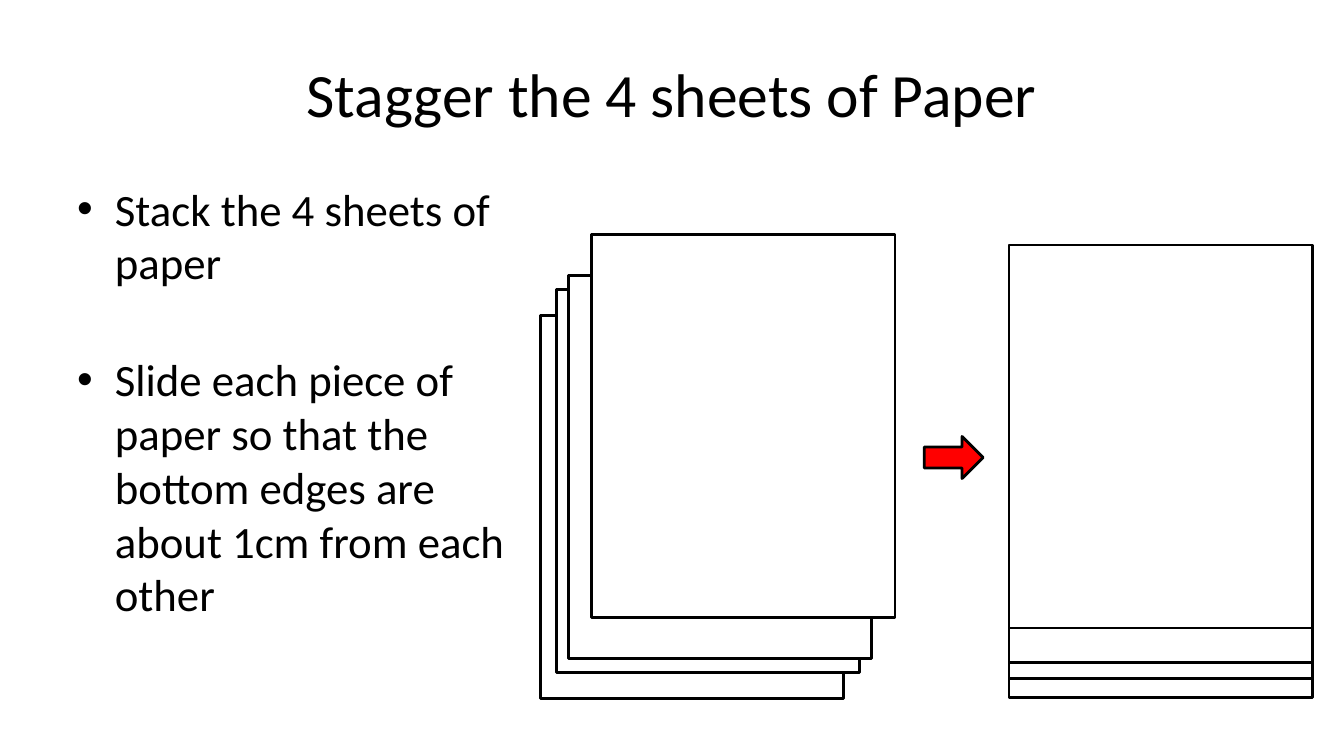
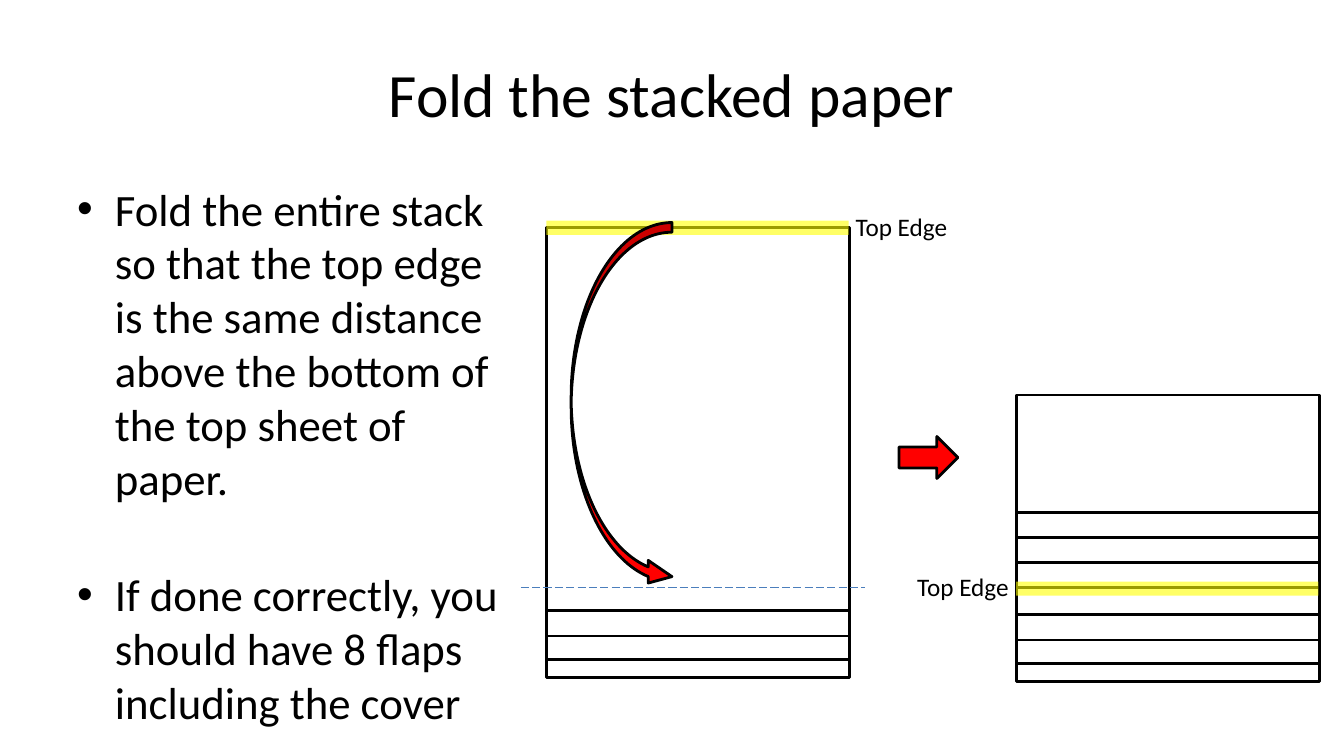
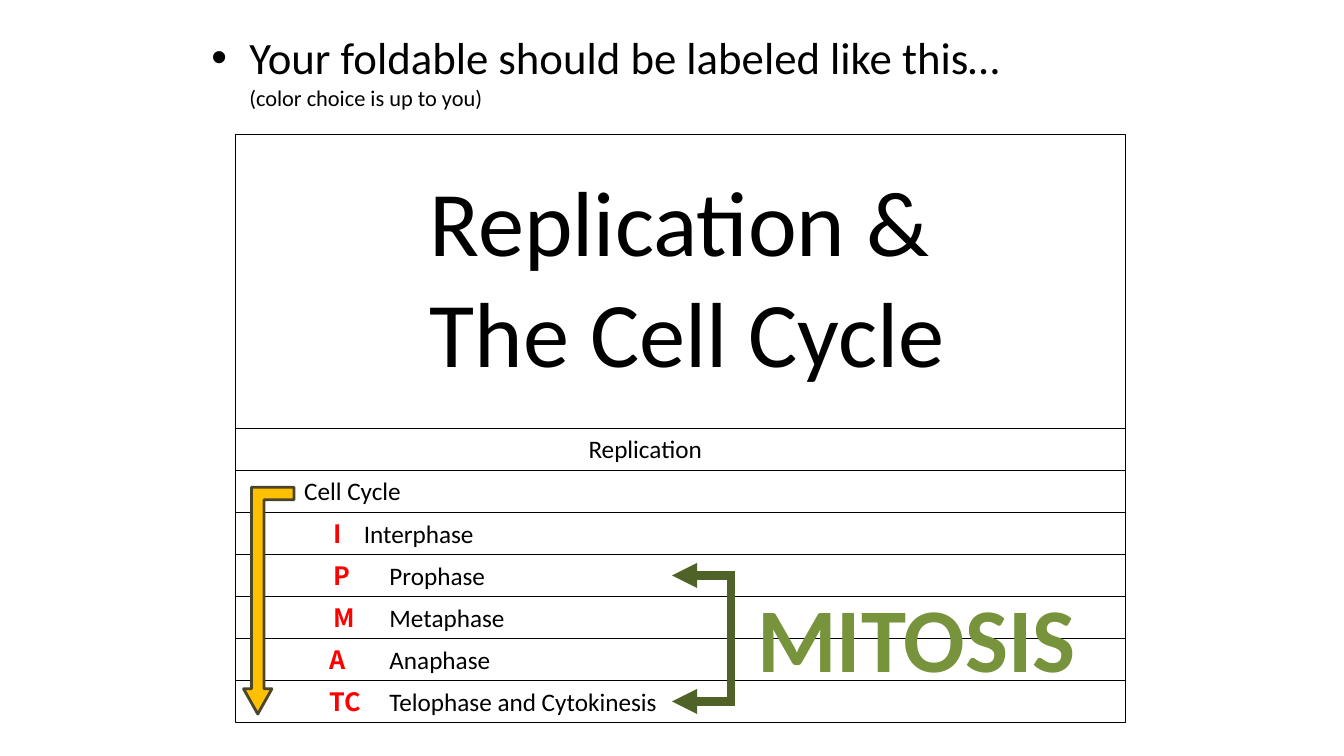
"""Build three slides on making and labelling a layered paper foldable."""
from dataclasses import dataclass

from lxml import etree
from pptx import Presentation
from pptx.dml.color import RGBColor
from pptx.enum.dml import MSO_LINE
from pptx.enum.shapes import MSO_CONNECTOR, MSO_SHAPE
from pptx.enum.text import MSO_ANCHOR, PP_ALIGN
from pptx.oxml.ns import qn
from pptx.util import Pt

RULE = MSO_CONNECTOR.STRAIGHT
SHEET = MSO_SHAPE.RECTANGLE
RIGHT_ARROW = MSO_SHAPE.RIGHT_ARROW
CURVED_ARROW = MSO_SHAPE.CURVED_RIGHT_ARROW
BENT_ARROW = MSO_SHAPE.BENT_UP_ARROW
LONG_DASH = MSO_LINE.LONG_DASH
LEFT, CENTER = PP_ALIGN.LEFT, PP_ALIGN.CENTER
TOP, MIDDLE = MSO_ANCHOR.TOP, MSO_ANCHOR.MIDDLE


@dataclass(frozen=True)
class Theme:
    font: str = "Calibri"
    letter_font: str = "Noto Sans CJK KR"
    black: str = "000000"
    white: str = "FFFFFF"
    red: str = "FF0000"
    yellow: str = "FFFF00"
    fold_blue: str = "4B7EBC"
    gold: str = "FFC000"
    brown: str = "4A452A"
    dark_green: str = "4F6228"
    green: str = "77933C"
    title: float = 44
    body: float = 32
    label: float = 18
    note: float = 16
    cover: float = 66
    mitosis: float = 65
    outline: float = 2
    inset: float = 7.2
    hang: float = 27


THEME = Theme()


def add_text(slide, paragraphs, left, top, width, height, size=THEME.label, font=THEME.font,
             color=THEME.black, bold=False, align=LEFT, anchor=TOP, bullet=False,
             hang=0, gap=0, first_gap=0, tab=None):
    """Add a text box; a paragraph is a string or a list of (text, format) runs."""
    frame = slide.shapes.add_textbox(Pt(left), Pt(top), Pt(width), Pt(height)).text_frame
    frame.word_wrap = True
    frame.vertical_anchor = anchor
    for index, content in enumerate(paragraphs):
        paragraph = frame.add_paragraph() if index else frame.paragraphs[0]
        paragraph.alignment = align
        paragraph.space_before = Pt(gap if index else first_gap)
        props = paragraph._p.get_or_add_pPr()
        if hang:
            props.set("marL", str(Pt(hang)))
        if bullet is True or bullet == index + 1:
            props.set("indent", str(-Pt(hang)))
            etree.SubElement(props, qn("a:buFont"), typeface="Arial")
            etree.SubElement(props, qn("a:buChar"), char="•")
        if tab:
            stops = etree.SubElement(props, qn("a:tabLst"))
            etree.SubElement(stops, qn("a:tab"), pos=str(Pt(tab)), algn="l")
        runs = [(content, {})] if isinstance(content, str) else content
        for words, changes in runs:
            run = paragraph.add_run()
            run.text = words
            run.font.name = changes.get("font", font)
            run.font.size = Pt(changes.get("size", size))
            run.font.bold = changes.get("bold", bold)
            run.font.color.rgb = RGBColor.from_string(changes.get("color", color))


def draw(slide, kind, left, top, width, height, fill=THEME.white, ink=THEME.black,
         weight=THEME.outline, adjust=(), turn=0, dash=None, opacity=None, tip=False):
    """Draw a preset shape, or a straight rule running by width and height."""
    if kind is RULE:
        item = slide.shapes.add_connector(
            kind, Pt(left), Pt(top), Pt(left + width), Pt(top + height))
    else:
        item = slide.shapes.add_shape(kind, Pt(left), Pt(top), Pt(width), Pt(height))
        item.shadow.inherit = False
        item.fill.solid()
        item.fill.fore_color.rgb = RGBColor.from_string(fill)
        item.rotation = turn
        for index, value in enumerate(adjust):
            item.adjustments[index] = value
    item.line.color.rgb = RGBColor.from_string(ink)
    item.line.width = Pt(weight)
    if dash:
        item.line.dash_style = dash
    stroke = item.line._get_or_add_ln()
    if opacity:
        ink_node = stroke.find(".//" + qn("a:srgbClr"))
        etree.SubElement(ink_node, qn("a:alpha"), val=str(opacity * 1000))
    if tip:
        etree.SubElement(stroke, qn("a:tailEnd"), type="triangle")
    if kind is RULE:
        etree.SubElement(item._element.spPr, qn("a:effectLst"))


deck = Presentation()
deck.slide_width, deck.slide_height = Pt(960), Pt(540)
blank = deck.slide_layouts[6]
stagger, fold, labels = [deck.slides.add_slide(blank) for _ in range(3)]

steps = [
    (stagger, "Stagger the 4 sheets of Paper", 356.4, 660.2, [
        "Stack the 4 sheets of paper",
        "Slide each piece of paper so that the bottom edges are about 1cm from each other"]),
    (fold, "Fold the stacked paper", 414, 642.2, [
        "Fold the entire stack so that the top edge is the same distance above the bottom "
        "of the top sheet of paper.",
        "If done correctly, you should have 8 flaps including the cover"]),
]
for slide, title, body_height, arrow_left, bullets in steps:
    add_text(slide, [title], 48, 21.6, 864, 90, size=THEME.title, align=CENTER, anchor=MIDDLE)
    add_text(slide, bullets, 48, 126, 330, body_height, size=THEME.body, bullet=True,
             hang=THEME.hang, gap=45)
    draw(slide, RIGHT_ARROW, arrow_left, 311.8, 42, 30, fill=THEME.red)

sheet_width, sheet_height = 216.7, 273.6
staggered = [(720.7, top) for top in (224.6, 211, 199.4, 175)]
loose = [(385.9, 225.4), (397.4, 206.6), (406.1, 196.6), (422.6, 167.8)]
for left, top in staggered + loose:
    draw(stagger, SHEET, left, top, sheet_width, sheet_height)

open_left, folded_left = 390.2, 725.8
flaps = [(329.8, 157), (383.8, 90), (401.8, 55.4), (419.8, 19.4), (282.2, 84.2)]
for top, height in flaps:
    draw(fold, SHEET, folded_left, top, sheet_width, height)
for top in (210.2, 197.3, 180.7, 162.7):
    draw(fold, SHEET, open_left, top, sheet_width, sheet_height)
draw(fold, RULE, 372, 420, 246, 0, ink=THEME.fold_blue, weight=0.75, dash=LONG_DASH)
for edge_left, edge_top, label_left, label_top in [
        (open_left, 162.7, 604, 147.6), (folded_left, 420.5, 648, 404.6)]:
    draw(fold, RULE, edge_left, edge_top, 216, 0, ink=THEME.yellow, weight=10, opacity=60)
    add_text(fold, ["Top Edge"], label_left, label_top, 84, 28.8)
draw(fold, CURVED_ARROW, 408, 159, 72, 261, fill=THEME.red, adjust=(0.096, 0.225, 0.235))

add_text(labels, ["Your foldable should be labeled like this…",
                  [("(color choice is up to you)", {"size": THEME.note})]],
         144, 18, 648, 70, size=THEME.body, bullet=1, hang=THEME.hang)
page_left, page_width, row_top, row_height = 168, 636, 306, 30
draw(labels, SHEET, page_left, 96, page_width, 420, weight=1)
for row in range(7):
    draw(labels, RULE, page_left, row_top + row * row_height, page_width, 0, weight=1)
add_text(labels, ["Replication &", "The Cell Cycle"], 300, 113.8, 400, 167, size=THEME.cover)
add_text(labels, ["Replication"], 413.3, row_top, 110, 28.8)
add_text(labels, ["Cell Cycle"], 210.2, row_top + row_height, 100, 28.8)

phases = [("I", "Interphase", 231.1, 260), ("P", "Prophase", 231.1, 278.3),
          ("M", "Metaphase", 231.1, 278.3), ("A", "Anaphase", 228.2, 278.3),
          ("TC", "Telophase and Cytokinesis", 228.2, 278.3)]
letter_style = {"font": THEME.letter_font, "color": THEME.red, "bold": True}
for row, (letter, phase, left, phase_left) in enumerate(phases, start=2):
    add_text(labels, [[(letter, letter_style), ("\t" + phase, {})]],
             left, row_top + row * row_height + 1, 260, 28.8,
             tab=phase_left - left - THEME.inset)

draw(labels, BENT_ARROW, 174, 348, 36, 162, fill=THEME.gold, ink=THEME.brown,
     adjust=(0.25, 0.281, 0.5), turn=180)
for top in (411, 501):
    draw(labels, RULE, 522, top, -42, 0, ink=THEME.dark_green, weight=6, tip=True)
draw(labels, RULE, 522, 408, 0, 96, ink=THEME.dark_green, weight=6)
add_text(labels, ["MITOSIS"], 534, 412, 252, 86, size=THEME.mitosis, color=THEME.green, bold=True)

deck.save("out.pptx")
